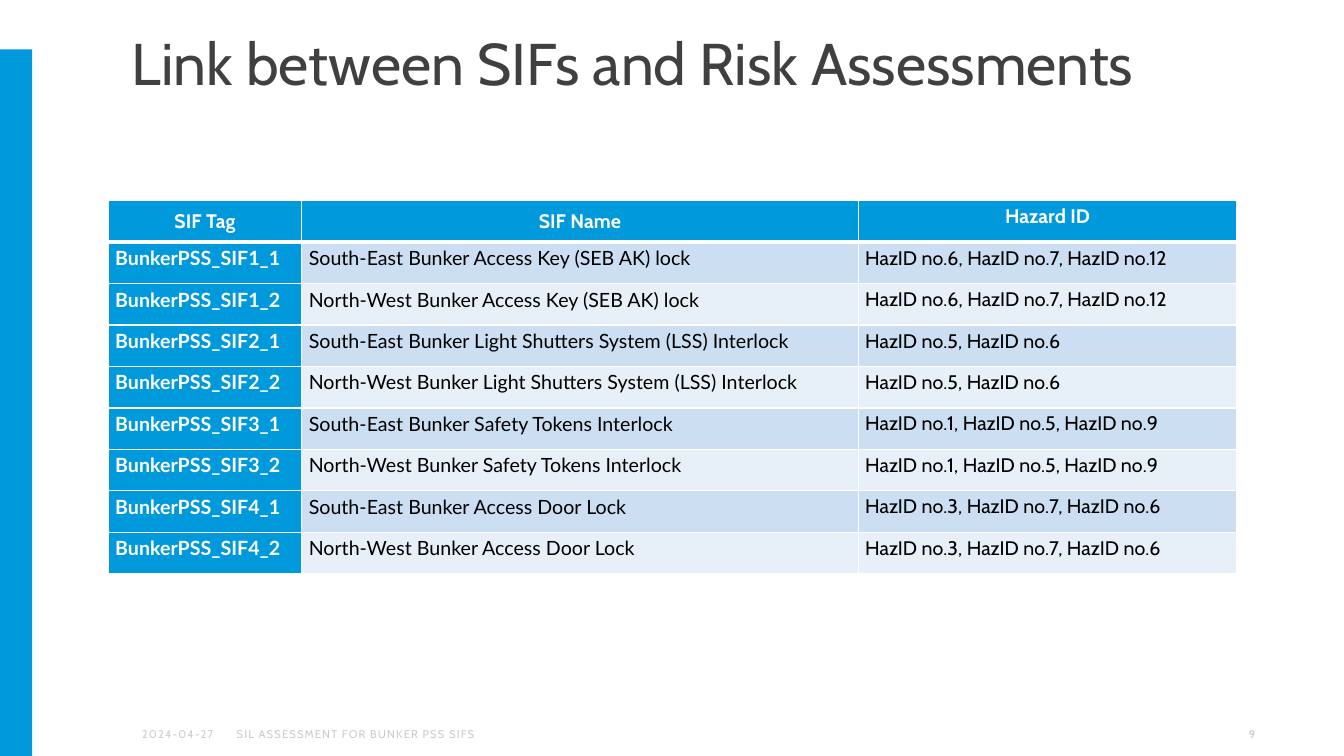
from itertools import product
from lxml.etree import SubElement
from pptx import Presentation
from pptx.dml.color import RGBColor
from pptx.enum.shapes import MSO_SHAPE as SHAPE
from pptx.enum.text import MSO_ANCHOR as ANCHOR, PP_ALIGN as ALIGN
from pptx.oxml.ns import qn
from pptx.util import Pt

BLUE = RGBColor(0x00, 0x99, 0xDC)
DARK = RGBColor(0x40, 0x40, 0x40)
GREY = RGBColor(0xCC, 0xCC, 0xCC)
WHITE = RGBColor(0xFF, 0xFF, 0xFF)
BLACK = RGBColor(0x00, 0x00, 0x00)
BANDS = [RGBColor(0xCC, 0xDE, 0xF2), RGBColor(0xE7, 0xEF, 0xF9)]


def add_run(para, text, size, color, bold=False, face="Cabin"):
    run = para.add_run()
    run.text = text
    font = run.font
    font.name, font.size, font.bold = face, Pt(size), bold
    font.color.rgb = color
    return run


def add_edge(cell, side, width):
    line = SubElement(cell._tc.get_or_add_tcPr(), qn("a:ln" + side), w=str(Pt(width)))
    fill = SubElement(line, qn("a:solidFill"))
    SubElement(fill, qn("a:srgbClr"), val=str(WHITE))


deck = Presentation()
deck.slide_width, deck.slide_height = Pt(960), Pt(540)
slide = deck.slides.add_slide(deck.slide_layouts[6])
shapes = slide.shapes

# Side bar
bar = shapes.add_shape(SHAPE.RECTANGLE, 0, Pt(35.3), Pt(23), Pt(504.7))
bar.shadow.inherit = False
bar.fill.solid()
bar.fill.fore_color.rgb = BLUE
bar.line.fill.background()

# Title
title = shapes.add_textbox(Pt(87.1), Pt(20.9), Pt(737.3), Pt(51.8)).text_frame
title.word_wrap = True
title.margin_bottom = Pt(1.4)
para = title.paragraphs[0]
para.line_spacing = 0.9
add_run(para, "Link between SIFs and Risk Assessments", 42, DARK)

# Footer: left, width, text, alignment, bold, letter spacing
footer = [
    (94.3, 65.5, "2024-04-27", ALIGN.LEFT, False, 80),
    (162, 339.8, "SIL ASSESSMENT FOR BUNKER PSS SIFS", ALIGN.LEFT, False, 80),
    (687.6, 216, "9", ALIGN.RIGHT, True, 0),
]
for left, width, text, align, bold, gap in footer:
    frame = shapes.add_textbox(Pt(left), Pt(509.8), Pt(width), Pt(28.8)).text_frame
    frame.word_wrap = True
    frame.vertical_anchor = ANCHOR.MIDDLE
    para = frame.paragraphs[0]
    para.alignment = align
    run = add_run(para, text, 8, GREY, bold)
    if gap:
        run.font._element.set("spc", str(gap))

# Table content: each function exists for both bunkers
links = [
    ("Access Key (SEB AK) lock", (6, 7, 12)),
    ("Light Shutters System (LSS) Interlock", (5, 6)),
    ("Safety Tokens Interlock", (1, 5, 9)),
    ("Access Door Lock", (3, 7, 6)),
]
sides = ["South-East", "North-West"]
rows = [("SIF Tag", "SIF Name", "Hazard ID")]
for (num, (name, ids)), (part, side) in product(enumerate(links, 1), enumerate(sides, 1)):
    risks = ", ".join(f"HazID no.{i}" for i in ids)
    rows.append((f"BunkerPSS_SIF{num}_{part}", f"{side} Bunker {name}", risks))

# Table
table = shapes.add_table(len(rows), 3, Pt(77.3), Pt(143.4), Pt(806.4), Pt(266.4)).table
for col, width in zip(table.columns, (138.3, 397.4, 270.7)):
    col.width = Pt(width)
for r, row in enumerate(rows):
    table.rows[r].height = Pt(29.6)
    for c, text in enumerate(row):
        cell = table.cell(r, c)
        head = r == 0
        strong = head or c == 0
        cell.margin_left = cell.margin_right = Pt(5)
        cell.margin_top = cell.margin_bottom = Pt(2.9)
        cell.vertical_anchor = ANCHOR.MIDDLE if head and c < 2 else ANCHOR.TOP
        for edge in "LRTB":
            thick = (head and edge == "B") or (r == 1 and edge == "T")
            add_edge(cell, edge, 3 if thick else 1)
        cell.fill.solid()
        cell.fill.fore_color.rgb = BLUE if strong else BANDS[(r - 1) % 2]
        para = cell.text_frame.paragraphs[0]
        para.alignment = ALIGN.CENTER if head else ALIGN.LEFT
        para.space_after = Pt(6)
        face = "Cabin" if head or c == 2 else "Lato"
        add_run(para, text, 14, WHITE if strong else BLACK, strong, face)

deck.save("out.pptx")
